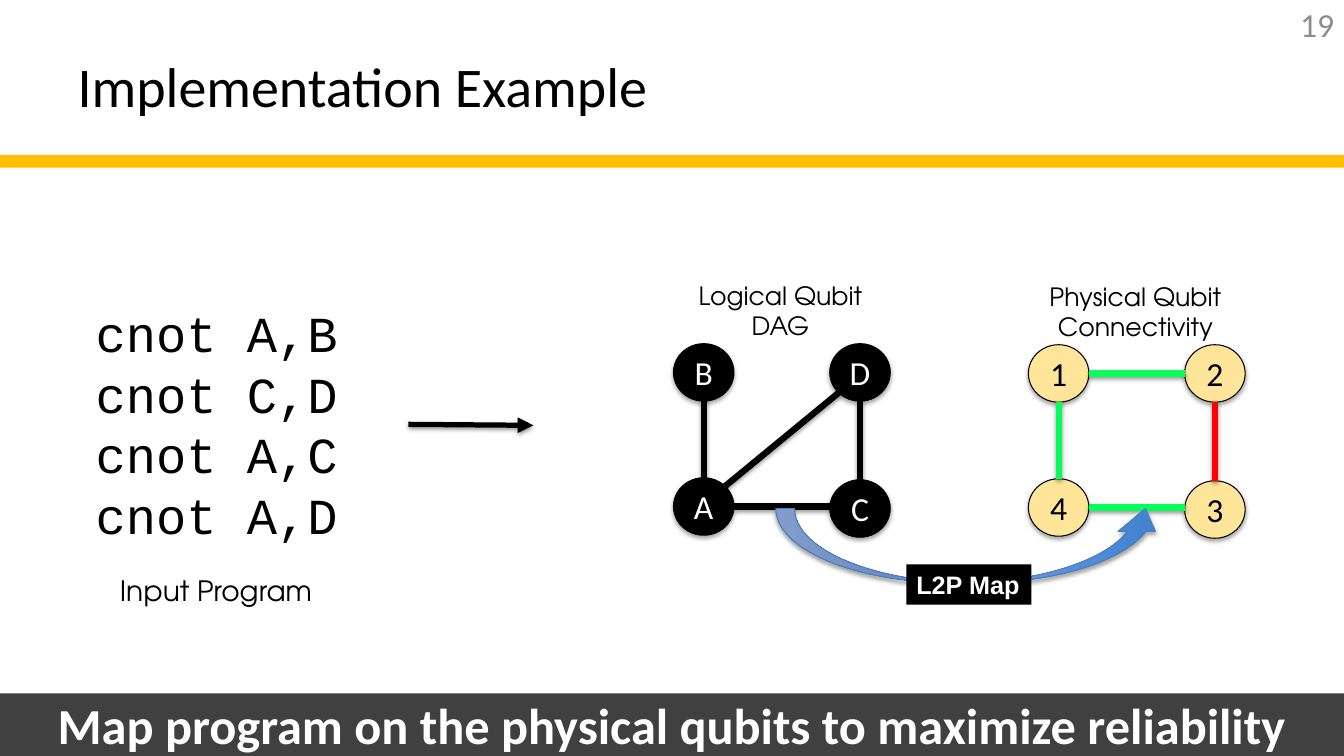
from math import sqrt

from pptx import Presentation
from pptx.dml.color import RGBColor
from pptx.enum import shapes, text
from pptx.oxml import parse_xml
from pptx.oxml.ns import nsdecls
from pptx.util import Inches, Pt

TITLE = "Implementation Example"
PAGE_NUMBER = "19"
PROGRAM = ["cnot A,B", "cnot C,D", "cnot A,C", "cnot A,D"]
PROGRAM_CAPTION = "Input Program"
MAP_LABEL = "L2P Map"
TAKEAWAY = "Map program on the physical qubits to maximize reliability"

# Nodes give (column, row); edges give start, end and theme colour.
GRAPHS = [
    dict(label="Logical Qubit DAG", left=6.68, top=3.41, fill="black", font="white",
         nodes={"B": (0, 0), "D": (1, 0), "C": (1, 1), "A": (0, 1)},
         edges=[("A", "D", "black"), ("B", "A", "black"),
                ("D", "C", "black"), ("A", "C", "black")]),
    dict(label="Physical Qubit Connectivity", left=10.2, top=3.42, fill="sand", font="black",
         nodes={"1": (0, 0), "2": (1, 0), "3": (1, 1), "4": (0, 1)},
         edges=[("1", "2", "green"), ("1", "4", "green"),
                ("2", "3", "red"), ("4", "3", "green")]),
]

THEME = {
    "colors": dict(black="000000", white="FFFFFF", gray="8C8C8C", gold="FFC000",
                   charcoal="404040", sand="FEE599", green="07FD59", red="FF0000",
                   blue="3F80CE", pale_blue="A4C4FF", outline_blue="4B7EBC"),
    "fonts": dict(main="Calibri", code="Courier New", caption="TeX Gyre Adventor",
                  label="Arial"),
    "sizes": dict(title=40, code=36, takeaway=36, node=24, page=24, caption=20, label=18),
}

SLIDE_WIDTH, SLIDE_HEIGHT = 13.33, 7.5
NODE_WIDTH, NODE_HEIGHT = 0.6, 0.57
COLUMN_STEP, ROW_STEP, ROW_TILT = 1.55, 1.33, 0.02

ALIGN = text.PP_ALIGN
SHAPE = shapes.MSO_SHAPE


def color(name):
    return RGBColor.from_string(THEME["colors"][name])


def write(shape, lines, size, font="main", ink="black", align=ALIGN.LEFT,
          bold=False, **frame_format):
    frame = shape.text_frame
    frame.text = "\n".join(lines)
    for name, value in {"word_wrap": True, **frame_format}.items():
        setattr(frame, name, value)
    values = dict(name=THEME["fonts"][font], size=Pt(THEME["sizes"][size]), bold=bold)
    for paragraph in frame.paragraphs:
        paragraph.alignment = align
        for name, value in values.items():
            setattr(paragraph.font, name, value)
        paragraph.font.color.rgb = color(ink)


def add_text(slide, box, lines, size, **options):
    shape = slide.shapes.add_textbox(*map(Inches, box))
    write(shape, lines, size, **options)


def add_shadow(shape, opacity, distance):
    """Add a soft shadow below the shape; call after its fill and line are set."""
    shape._element.spPr.append(parse_xml(
        f'<a:effectLst {nsdecls("a")}><a:outerShdw blurRad="{Pt(3.1)}" '
        f'dist="{Pt(distance)}" dir="5400000" rotWithShape="0"><a:srgbClr val="000000">'
        f'<a:alpha val="{opacity * 1000}"/></a:srgbClr></a:outerShdw></a:effectLst>'))


def add_box(slide, kind, box, fill=None, outline=None, width=0.75, shadow=False):
    shape = slide.shapes.add_shape(kind, *map(Inches, box))
    if fill:
        shape.fill.solid()
        shape.fill.fore_color.rgb = color(fill)
    if outline:
        shape.line.color.rgb = color(outline)
        shape.line.width = Pt(width)
    else:
        shape.line.fill.background()
    if shadow:
        add_shadow(shape, 35, 1.8)
    else:
        shape.shadow.inherit = False
    return shape


def add_line(slide, start, end, ink, width, arrow=False):
    line = slide.shapes.add_connector(shapes.MSO_CONNECTOR.STRAIGHT,
                                      *map(Inches, (*start, *end)))
    line.line.color.rgb = color(ink)
    line.line.width = Pt(width)
    if arrow:
        line.line._get_or_add_ln().append(
            parse_xml(f'<a:tailEnd {nsdecls("a")} type="triangle"/>'))
    add_shadow(line, 38, 1.6)


def edge_ends(graph, start, end):
    """Return the points where an edge meets the rims of its two nodes."""
    (column, row), (end_column, end_row) = graph["nodes"][start], graph["nodes"][end]
    across, down = end_column - column, end_row - row
    reach = 1 / sqrt(across ** 2 + down ** 2)
    dx, dy = across * reach * NODE_WIDTH / 2, down * reach * NODE_HEIGHT / 2
    x, y = node_center(graph, column, row)
    end_x, end_y = node_center(graph, end_column, end_row)
    if not down:
        end_y = y
    return (x + dx, y + dy), (end_x - dx, end_y - dy)


def node_center(graph, column, row):
    return (graph["left"] + column * COLUMN_STEP + NODE_WIDTH / 2,
            graph["top"] + row * (ROW_STEP + column * ROW_TILT) + NODE_HEIGHT / 2)


def add_graph(slide, graph):
    for name, cell in graph["nodes"].items():
        x, y = node_center(graph, *cell)
        box = (x - NODE_WIDTH / 2, y - NODE_HEIGHT / 2, NODE_WIDTH, NODE_HEIGHT)
        node = add_box(slide, SHAPE.OVAL, box, graph["fill"], "black", shadow=True)
        write(node, [name], "node", ink=graph["font"], align=ALIGN.CENTER,
              vertical_anchor=text.MSO_ANCHOR.MIDDLE, margin_left=0, margin_right=0)
    for start, end, ink in graph["edges"]:
        add_line(slide, *edge_ends(graph, start, end), ink, 4.5)
    add_text(slide, (graph["left"], graph["top"] - 0.68, 2.12, 0.71),
             [graph["label"]], "label", font="caption", align=ALIGN.CENTER)


def add_map_arrow(slide):
    arrow = add_box(slide, SHAPE.CURVED_RIGHT_ARROW, (9.25, 3.49, 0.74, 3.85),
                    "blue", "outline_blue", shadow=True)
    arrow.rotation = 270
    for index, value in enumerate((0.25, 0.5, 0.306)):
        arrow.adjustments[index] = value
    arrow.fill.gradient()
    arrow.fill.gradient_angle = 90
    for stop, name in zip(arrow.fill.gradient_stops, ("blue", "pale_blue")):
        stop.color.rgb = color(name)
    label = add_box(slide, SHAPE.RECTANGLE, (8.99, 5.6, 1.24, 0.4), "black")
    write(label, [MAP_LABEL], "label", font="label", ink="white", bold=True,
          word_wrap=False, vertical_anchor=text.MSO_ANCHOR.TOP)


def main():
    presentation = Presentation()
    presentation.slide_width = Inches(SLIDE_WIDTH)
    presentation.slide_height = Inches(SLIDE_HEIGHT)
    slide = presentation.slides.add_slide(presentation.slide_layouts[5])
    middle = text.MSO_ANCHOR.MIDDLE

    add_box(slide, SHAPE.ROUNDED_RECTANGLE, (0, 1.55, SLIDE_WIDTH, 0.1), "gold", "gold", 2)
    title = slide.shapes.title
    title.left, title.top, title.width, title.height = map(Inches, (0.67, 0.22, 8.89, 1.25))
    write(title, [TITLE], "title", vertical_anchor=middle)
    add_text(slide, (12.63, 0, 0.7, 0.48), [PAGE_NUMBER], "page", ink="gray",
             align=ALIGN.RIGHT, vertical_anchor=middle)

    add_text(slide, (0.85, 2.95, 2.63, 2.52), PROGRAM, "code", font="code", word_wrap=False)
    add_text(slide, (1.09, 5.64, 2.15, 0.44), [PROGRAM_CAPTION], "caption",
             font="caption", word_wrap=False)
    for graph in GRAPHS:
        add_graph(slide, graph)
    add_line(slide, (4.05, 4.21), (5.29, 4.22), "black", 3.75, arrow=True)
    add_map_arrow(slide)

    banner = add_box(slide, SHAPE.RECTANGLE, (0, 6.88, SLIDE_WIDTH, 0.62), "charcoal")
    write(banner, [TAKEAWAY], "takeaway", ink="white", align=ALIGN.CENTER, bold=True,
          vertical_anchor=middle)
    presentation.save("out.pptx")


if __name__ == "__main__":
    main()
